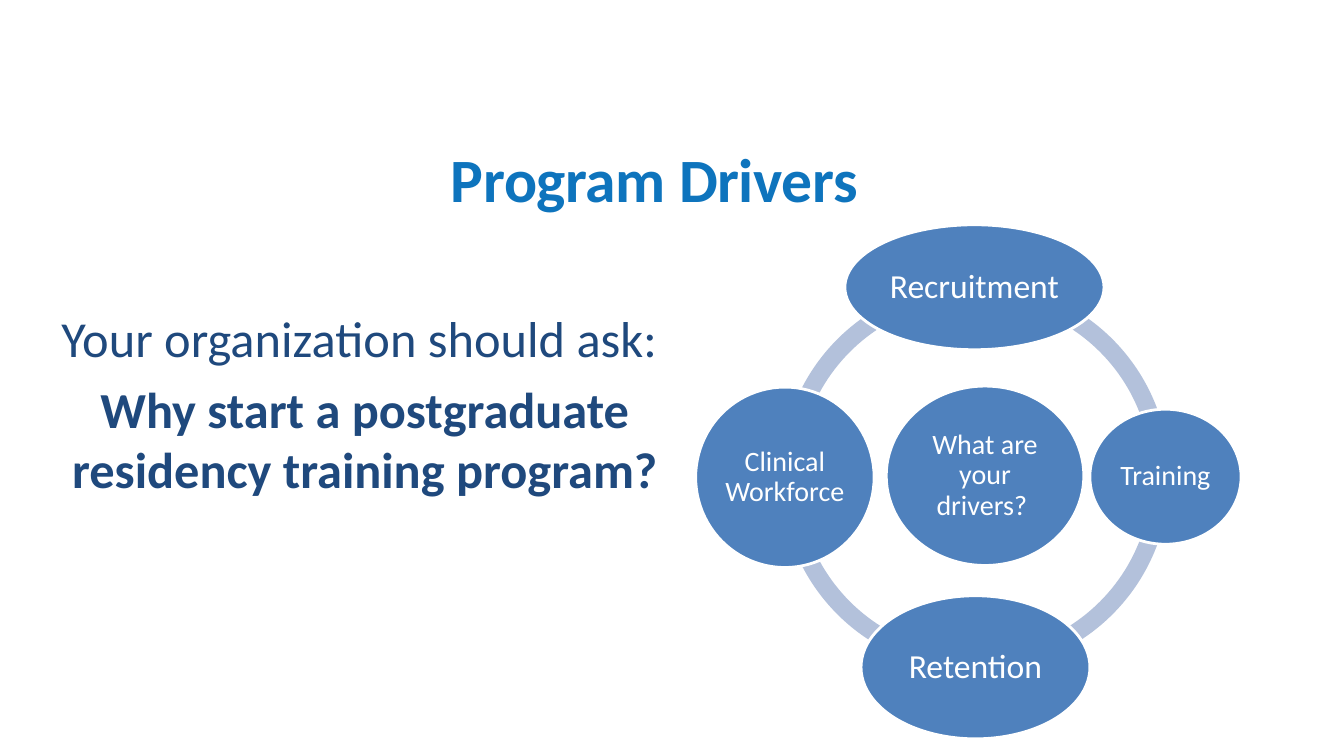
from dataclasses import dataclass

from lxml import etree
from pptx import Presentation
from pptx import util as u
from pptx.dml.color import RGBColor
from pptx.enum import shapes, text

FONT = "Calibri"
TITLE_BLUE = "0E74BD"
BODY_BLUE = "1F497D"
DRIVER_BLUE = "4F81BD"
RING_BLUE = "B3C1DB"
WHITE = "FFFFFF"

RING_LEFT, RING_TOP, RING_SIZE = 7.74, 2.8, 3.86
RING_THICKNESS = 0.046
QUARTER_TURN = 54  # block arc angles count 216 units to the full circle


@dataclass(frozen=True)
class Driver:
    label: str
    left: float
    top: float
    width: float
    height: float
    size: int = 20


DRIVERS = [
    Driver("What are your drivers? ", 8.79, 3.83, 1.96, 1.78),
    Driver("Recruitment", 8.38, 2.23, 2.57, 1.24, 24),
    Driver("Training", 10.81, 4.06, 1.5, 1.34),
    Driver("Retention", 8.54, 5.91, 2.27, 1.42, 24),
    Driver("Clinical Workforce", 6.9, 3.84, 1.77, 1.79),
]


def color(value: str) -> RGBColor:
    return RGBColor.from_string(value)


def write(paragraph, content: str, *, size: float, hue: str, bold: bool = False,
          line_spacing: float = 1.0, space_before: float = 0,
          tracking: float = 0) -> None:
    """Fill a paragraph with one centred run; tracking is in points."""
    paragraph.alignment = text.PP_ALIGN.CENTER
    paragraph.line_spacing = line_spacing
    paragraph.space_before = u.Pt(space_before)
    run = paragraph.add_run()
    run.text = content
    run.font.name = FONT
    run.font.size = u.Pt(size)
    run.font.bold = bold
    run.font.color.rgb = color(hue)
    if tracking:
        run._r.get_or_add_rPr().set("spc", str(round(tracking * 100)))


def add_text_frame(slide, left: float, top: float, width: float, height: float):
    box = slide.shapes.add_textbox(*map(u.Inches, (left, top, width, height)))
    box.text_frame.word_wrap = True
    return box.text_frame


def add_filled_shape(slide, kind, left: float, top: float, width: float,
                     height: float, fill: str):
    shape = slide.shapes.add_shape(
        kind, *map(u.Inches, (left, top, width, height)))
    shape.shadow.inherit = False
    shape.fill.solid()
    shape.fill.fore_color.rgb = color(fill)
    shape.line.fill.background()
    return shape


def add_ring_quarter(slide, start: int) -> None:
    arc = add_filled_shape(slide, shapes.MSO_SHAPE.BLOCK_ARC, RING_LEFT, RING_TOP,
                           RING_SIZE, RING_SIZE, RING_BLUE)
    end = (start + QUARTER_TURN) % (4 * QUARTER_TURN)
    for index, value in enumerate((start, end, RING_THICKNESS)):
        arc.adjustments[index] = value


def add_driver(slide, driver: Driver) -> None:
    ellipse = add_filled_shape(slide, shapes.MSO_SHAPE.OVAL, driver.left, driver.top,
                               driver.width, driver.height, DRIVER_BLUE)
    ellipse.line.color.rgb = color(WHITE)
    ellipse.line.width = u.Pt(2)
    frame = ellipse.text_frame
    frame.word_wrap = True
    frame.vertical_anchor = text.MSO_ANCHOR.MIDDLE
    frame.margin_left = frame.margin_right = u.Inches(0.02)
    frame.margin_top = frame.margin_bottom = u.Inches(0.03)
    write(frame.paragraphs[0], driver.label, size=driver.size, hue=WHITE,
          line_spacing=0.9)


def main() -> None:
    presentation = Presentation()
    presentation.slide_width = u.Inches(13.33)
    presentation.slide_height = u.Inches(7.5)
    slide = presentation.slides.add_slide(presentation.slide_layouts[6])

    title = add_text_frame(slide, 0.49, 1.43, 12, 0.79)
    write(title.paragraphs[0], "Program Drivers", size=44, hue=TITLE_BLUE,
          bold=True, line_spacing=0.9, tracking=-0.3)

    question = add_text_frame(slide, 0.49, 3, 6.26, 4.29)
    write(question.paragraphs[0], "Your organization should ask: ",
          size=36, hue=BODY_BLUE)
    write(question.add_paragraph(),
          "Why start a postgraduate residency training program?",
          size=36, hue=BODY_BLUE, bold=True, space_before=7.2)

    for quarter in range(4):
        add_ring_quarter(slide, quarter * QUARTER_TURN)
    for driver in DRIVERS:
        add_driver(slide, driver)

    presentation.save("out.pptx")


if __name__ == "__main__":
    main()
